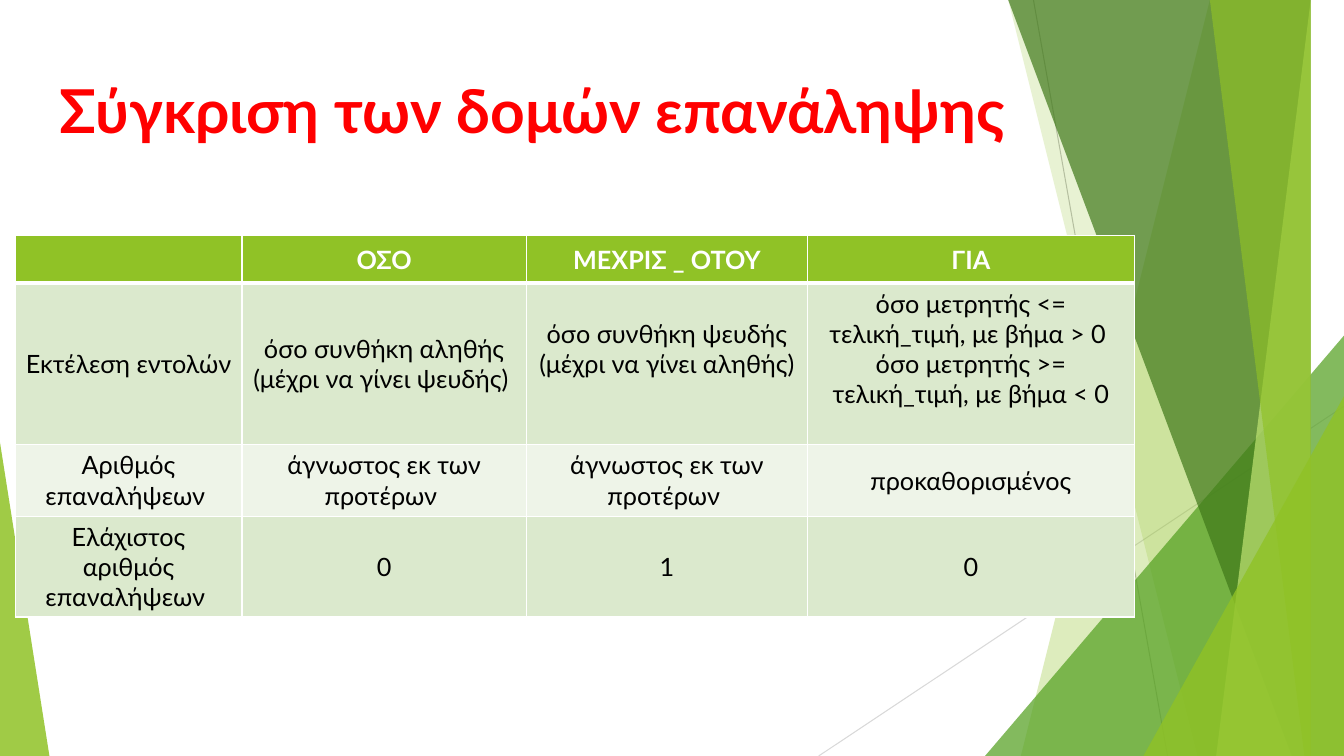
from dataclasses import dataclass

from lxml.etree import SubElement
from pptx import Presentation
from pptx.dml.color import RGBColor
from pptx.enum.shapes import MSO_CONNECTOR, MSO_SHAPE
from pptx.enum.text import MSO_ANCHOR, MSO_AUTO_SIZE, PP_ALIGN
from pptx.oxml.ns import qn
from pptx.util import Inches, Pt

FONT = "Lato"
WHITE = "FFFFFF"
BLACK = "000000"
GREEN = "90C226"
WIDTH, HEIGHT = 13.33, 7.5


@dataclass
class Ray:
    start: tuple[float, float]
    end: tuple[float, float]
    color: str


@dataclass
class Band:
    top_left: float
    bottom_left: float
    top_right: float
    color: str
    opacity: int


@dataclass
class Triangle:
    left: float
    top: float
    width: float
    apex: float
    color: str
    opacity: int


@dataclass
class Entry:
    text: str
    blank_below: float = 0


RAYS = [
    Ray((10.25, 0), (11.58, HEIGHT), "BFBFBF"),
    Ray((WIDTH, 4.03), (8.12, HEIGHT), "D9D9D9"),
]
FACETS = [
    Band(12.28, 10.04, WIDTH, GREEN, 30),
    Band(10.5, 11.83, WIDTH, GREEN, 20),
    Triangle(9.77, 3.33, 3.56, 1, "54A021", 72),
    Band(10.21, 12.91, WIDTH, "3F7819", 70),
    Band(13.03, 11.92, WIDTH, "C0E474", 70),
    Band(11.96, 13.18, WIDTH, GREEN, 65),
    Triangle(11.34, 3.93, 1.99, 1, GREEN, 80),
    Triangle(0, 4.39, 0.49, 0, GREEN, 85),
]
COLUMN_WIDTHS = [2.25, 2.82, 2.79, 3.24]
ROW_HEIGHTS = [0.47, 1.6, 0.71, 1.0]
ROW_FILLS = [GREEN, "DBE9CD", "EEF4E8", "DBE9CD"]
ROWS = [
    [Entry(""), Entry("ΟΣΟ"), Entry("ΜΕΧΡΙΣ _ ΟΤΟΥ"), Entry("ΓΙΑ")],
    [
        Entry("Εκτέλεση εντολών"),
        Entry("όσο συνθήκη αληθής (μέχρι να γίνει ψευδής) "),
        Entry("όσο συνθήκη ψευδής (μέχρι να γίνει αληθής)", 0.3),
        Entry("όσο μετρητής <= τελική_τιμή, με βήμα > 0 \n"
              "όσο μετρητής >= τελική_τιμή, με βήμα < 0", 0.3),
    ],
    [
        Entry("Αριθμός επαναλήψεων "),
        Entry("άγνωστος εκ των προτέρων "),
        Entry("άγνωστος εκ των προτέρων "),
        Entry("προκαθορισμένος"),
    ],
    [Entry("Ελάχιστος αριθμός επαναλήψεων "), Entry("0"), Entry("1"), Entry("0")],
]


def rgb(value: str) -> RGBColor:
    return RGBColor.from_string(value)


def format_text(tf, size: float, color: str, bold: bool, align: PP_ALIGN) -> None:
    for p in tf.paragraphs:
        p.alignment = align
        for r in p.runs:
            r.font.name = FONT
            r.font.size = Pt(size)
            r.font.bold = bold
            r.font.color.rgb = rgb(color)


def draw_ray(s, ray: Ray) -> None:
    x1, y1, x2, y2 = (Inches(v) for v in ray.start + ray.end)
    line = s.shapes.add_connector(MSO_CONNECTOR.STRAIGHT, x1, y1, x2, y2)
    line.line.color.rgb = rgb(ray.color)
    line.line.width = Pt(0.75)
    SubElement(line._element.spPr, qn("a:effectLst"))


def draw_facet(s, facet: Band | Triangle) -> None:
    if isinstance(facet, Band):
        builder = s.shapes.build_freeform(facet.top_left, 0, scale=Inches(1))
        builder.add_line_segments(
            [(facet.top_right, 0), (WIDTH, HEIGHT), (facet.bottom_left, HEIGHT)])
        sp = builder.convert_to_shape()
    else:
        sp = s.shapes.add_shape(
            MSO_SHAPE.ISOSCELES_TRIANGLE, Inches(facet.left), Inches(facet.top),
            Inches(facet.width), Inches(HEIGHT - facet.top))
        sp.adjustments[0] = facet.apex
    sp.shadow.inherit = False
    sp.line.fill.background()
    sp.fill.solid()
    sp.fill.fore_color.rgb = rgb(facet.color)
    color = sp._element.spPr.find(qn("a:solidFill"))[0]
    SubElement(color, qn("a:alpha"), val=str(facet.opacity * 1000))


def set_borders(cell, bottom: float) -> None:
    tc_pr = cell._tc.get_or_add_tcPr()
    for side, width in (("L", 1), ("R", 1), ("T", 1), ("B", bottom)):
        border = SubElement(tc_pr, qn(f"a:ln{side}"), w=str(Pt(width)))
        fill = SubElement(border, qn("a:solidFill"))
        SubElement(fill, qn("a:srgbClr"), val=WHITE)


def draw_table(s) -> None:
    table = s.shapes.add_table(
        len(ROWS), len(COLUMN_WIDTHS), Inches(0.15), Inches(2.34),
        Inches(sum(COLUMN_WIDTHS)), Inches(sum(ROW_HEIGHTS))).table
    for column, width in zip(table.columns, COLUMN_WIDTHS):
        column.width = Inches(width)
    for i, (row, height) in enumerate(zip(table.rows, ROW_HEIGHTS)):
        row.height = Inches(height)
        header = i == 0
        for cell, entry in zip(row.cells, ROWS[i]):
            set_borders(cell, 3 if header else 1)
            cell.fill.solid()
            cell.fill.fore_color.rgb = rgb(ROW_FILLS[i])
            cell.vertical_anchor = MSO_ANCHOR.MIDDLE
            cell.margin_bottom = Inches(0.05 + entry.blank_below)
            cell.text_frame.text = entry.text
            format_text(cell.text_frame, 18, WHITE if header else BLACK,
                        header, PP_ALIGN.CENTER)


def draw_title(s) -> None:
    title = s.shapes.title
    title.left, title.top = Inches(0.49), Inches(0.67)
    title.width, title.height = Inches(9.75), Inches(1.44)
    tf = title.text_frame
    tf.text = "Σύγκριση των δομών επανάληψης"
    tf.vertical_anchor = MSO_ANCHOR.TOP
    tf.auto_size = MSO_AUTO_SIZE.NONE
    format_text(tf, 43.2, "FF0000", True, PP_ALIGN.LEFT)
    s.shapes._spTree.append(title._element)


def main() -> None:
    prs = Presentation()
    prs.slide_width, prs.slide_height = Inches(WIDTH), Inches(HEIGHT)
    s = prs.slides.add_slide(prs.slide_layouts[5])
    for ray in RAYS:
        draw_ray(s, ray)
    for facet in FACETS:
        draw_facet(s, facet)
    draw_title(s)
    draw_table(s)
    prs.save("out.pptx")


if __name__ == "__main__":
    main()
